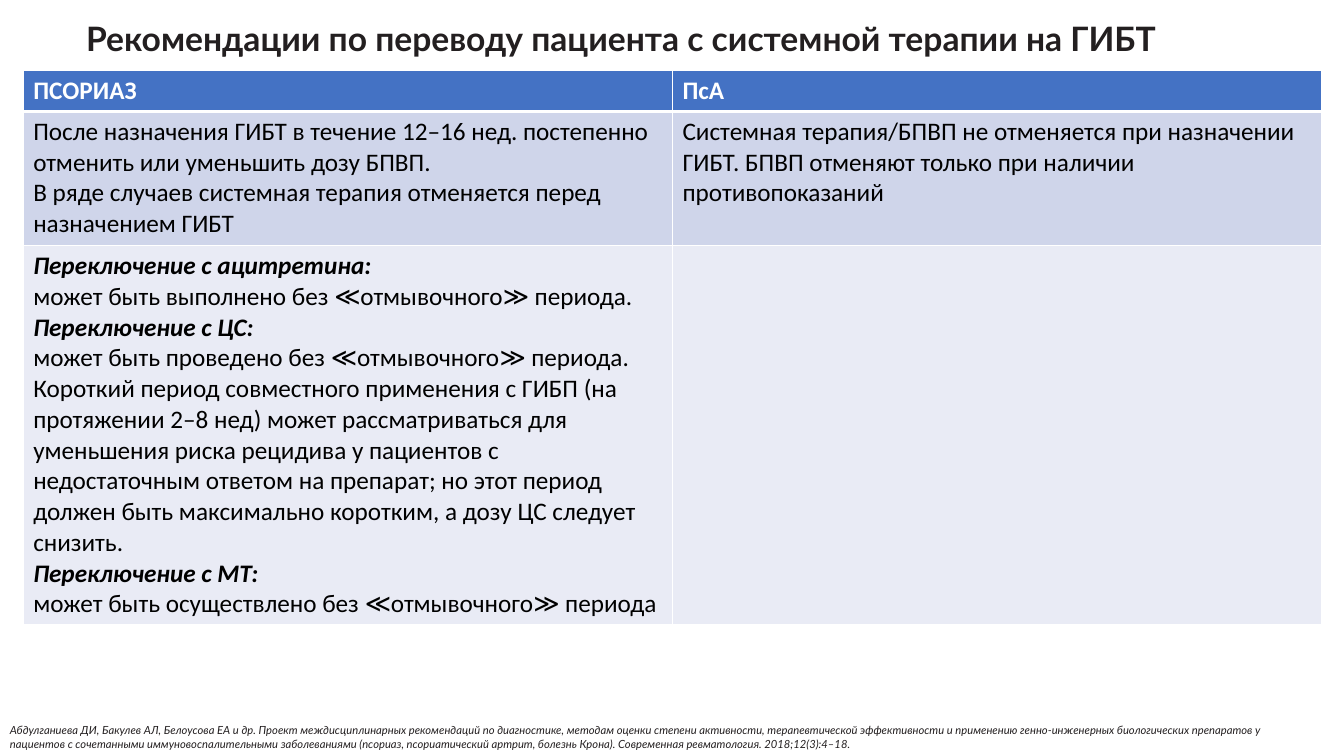
from lxml.etree import SubElement
from pptx import Presentation
from pptx.dml.color import RGBColor
from pptx.enum.text import MSO_ANCHOR, MSO_AUTO_SIZE, PP_ALIGN
from pptx.oxml.ns import qn
from pptx.util import Inches, Pt

DARK, WHITE, BLACK = "231F20", "FFFFFF", "000000"
FILLS = ["4472C4", "CFD5EA", "E9EBF5"]
HEIGHTS = [0.4, 1.33, 3.76]

TITLE = "Рекомендации по переводу пациента c системной терапии на ГИБТ"
SOURCE = (
    "Абдулганиева ДИ, Бакулев АЛ, Белоусова ЕА и др. Проект междисциплинарных "
    "рекомендаций по диагностике, методам оценки степени активности, "
    "терапевтической эффективности и применению генно-инженерных биологических "
    "препаратов у пациентов с сочетанными иммуновоспалительными заболеваниями "
    "(псориаз, псориатический артрит, болезнь Крона). "
    "Современная ревматология. 2018;12(3):4–18."
)

# Each cell is a list of (text, style) paragraphs: b bold, i italic
ROWS = [
    [[("ПСОРИАЗ", "b")], [("ПсА", "b")]],
    [
        [
            ("После назначения ГИБТ в течение 12–16 нед. постепенно "
             "отменить или уменьшить дозу БПВП.", ""),
            ("В ряде случаев системная терапия отменяется перед "
             "назначением ГИБТ", ""),
        ],
        [
            ("Системная терапия/БПВП не отменяется при назначении ГИБТ. "
             "БПВП отменяют только при наличии противопоказаний", ""),
        ],
    ],
    [
        [
            ("Переключение с ацитретина:", "bi"),
            ("может быть выполнено без ≪отмывочного≫ периода.", ""),
            ("Переключение с ЦС:", "bi"),
            ("может быть проведено без ≪отмывочного≫ периода.", ""),
            ("Короткий период совместного применения с ГИБП (на протяжении "
             "2–8 нед) может рассматриваться для уменьшения риска рецидива у "
             "пациентов с недостаточным ответом на препарат; но этот период "
             "должен быть максимально коротким, а дозу ЦС следует снизить.", ""),
            ("Переключение с МТ:", "bi"),
            ("может быть осуществлено без ≪отмывочного≫ периода", ""),
        ],
        [],
    ],
]


def color(code):
    return RGBColor.from_string(code)


def add_run(para, text, size, face, code, style=""):
    run = para.add_run()
    run.text = text
    font = run.font
    font.size, font.name = Pt(size), face
    font.color.rgb = color(code)
    font.bold, font.italic = "b" in style, "i" in style


def add_edge(cell, side, width):
    line = SubElement(cell._tc.get_or_add_tcPr(), qn("a:ln" + side),
                      w=str(Pt(width)))
    fill = SubElement(line, qn("a:solidFill"))
    SubElement(fill, qn("a:srgbClr"), val=WHITE)


def add_title(slide):
    title = slide.shapes.title
    title.left, title.top = Inches(0.41), Inches(0.02)
    title.width, title.height = Inches(11.5), Inches(0.76)
    frame = title.text_frame
    frame.auto_size = MSO_AUTO_SIZE.NONE
    frame.vertical_anchor = MSO_ANCHOR.MIDDLE
    para = frame.paragraphs[0]
    para.alignment, para.line_spacing = PP_ALIGN.CENTER, 0.9
    add_run(para, TITLE, 24, "Lato", DARK, "b")


def fill_cell(cell, paras, row):
    # Edges come before the fill; the header has a thick lower edge
    widths = {"L": 1, "R": 1, "T": 3 if row == 1 else 1,
              "B": 3 if row == 0 else 1}
    for side, width in widths.items():
        add_edge(cell, side, width)
    cell.fill.solid()
    cell.fill.fore_color.rgb = color(FILLS[row])
    frame = cell.text_frame
    for num, (text, style) in enumerate(paras):
        para = frame.add_paragraph() if num else frame.paragraphs[0]
        add_run(para, text, 18, "Calibri", BLACK if row else WHITE, style)


def add_grid(slide):
    table = slide.shapes.add_table(
        len(ROWS), 2, Inches(0.23), Inches(0.7),
        Inches(12.88), Inches(sum(HEIGHTS))).table
    for col in table.columns:
        col.width = Inches(6.44)
    for row, cells in enumerate(ROWS):
        table.rows[row].height = Inches(HEIGHTS[row])
        for col, paras in enumerate(cells):
            fill_cell(table.cell(row, col), paras, row)


def add_source(slide):
    box = slide.shapes.add_textbox(
        Inches(0), Inches(7.13), Inches(13.2), Inches(0.37))
    frame = box.text_frame
    frame.word_wrap = True
    frame.auto_size = MSO_AUTO_SIZE.SHAPE_TO_FIT_TEXT
    add_run(frame.paragraphs[0], SOURCE, 8, "Lato", DARK, "i")


def main():
    deck = Presentation()
    deck.slide_width, deck.slide_height = Inches(13.33), Inches(7.5)
    slide = deck.slides.add_slide(deck.slide_layouts[5])
    add_title(slide)
    add_grid(slide)
    add_source(slide)
    deck.save("out.pptx")


if __name__ == "__main__":
    main()
